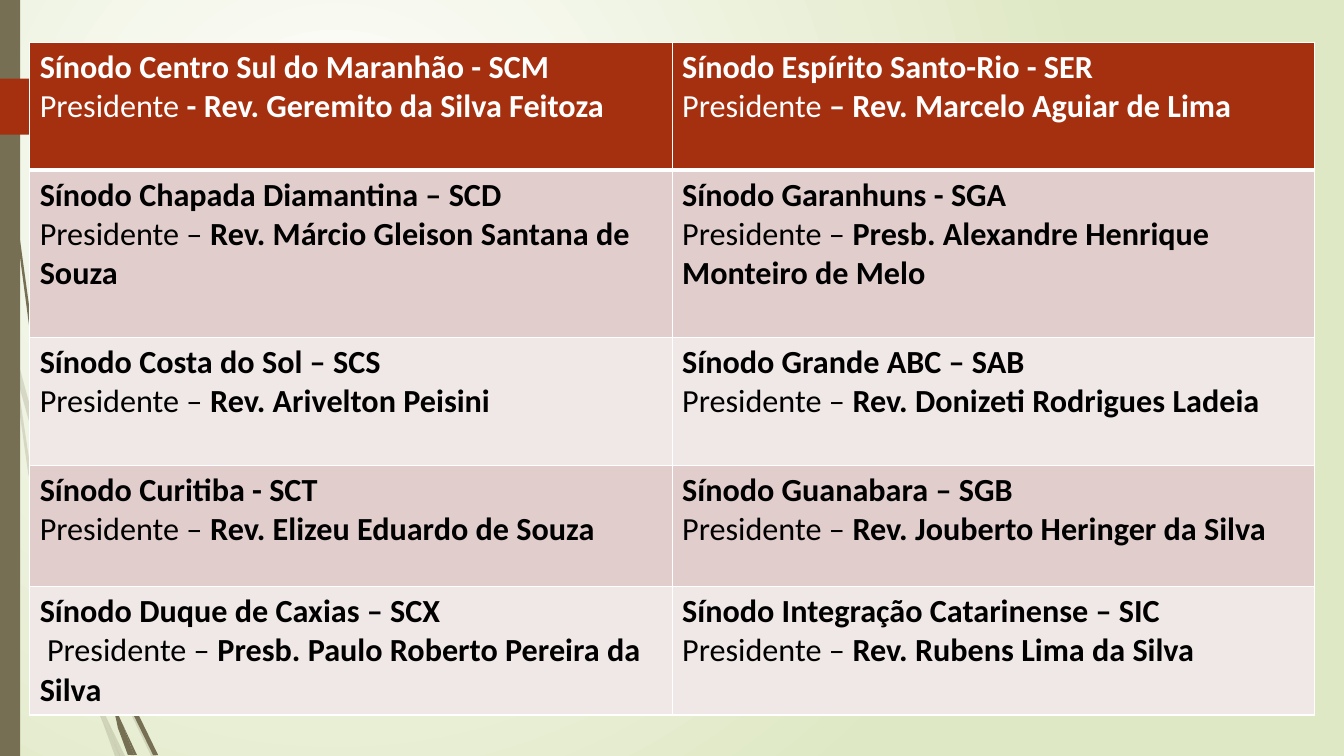
import dataclasses
import typing

import lxml.etree
import pptx
import pptx.dml.color
import pptx.enum.shapes
import pptx.oxml
import pptx.oxml.ns
import pptx.util

Pt = pptx.util.Pt
Points = list[tuple[float, float]]

COLOURS = {
    "bark": "766F54", "rust": "A53010", "white": "FFFFFF", "leaf": "DFE8C4",
    "black": "000000", "dark_band": "E1CDCC", "light_band": "F0E8E7",
}
FONT = "Calibri"
TABLE_LEFT, TABLE_TOP, COLUMN_WIDTH = 21.2, 30.2, 458.9
ROW_HEIGHTS = [91.4, 119.5, 91.4, 86.4, 91.4]


@dataclasses.dataclass
class Synod:
    name: str
    president: str
    role: str = "Presidente – "


@dataclasses.dataclass
class Wisp:
    points: Points
    opacity: int = 100


SYNODS = [
    [Synod("Sínodo Centro Sul do Maranhão - SCM", " - Rev. Geremito da Silva Feitoza", "Presidente"),
     Synod("Sínodo Espírito Santo-Rio - SER", " – Rev. Marcelo Aguiar de Lima", "Presidente")],
    [Synod("Sínodo Chapada Diamantina – SCD", "Rev. Márcio Gleison Santana de Souza"),
     Synod("Sínodo Garanhuns - SGA", "Presb. Alexandre Henrique Monteiro de Melo")],
    [Synod("Sínodo Costa do Sol – SCS", "Rev. Arivelton Peisini"),
     Synod("Sínodo Grande ABC – SAB", "Rev. Donizeti Rodrigues Ladeia")],
    [Synod("Sínodo Curitiba - SCT", "Rev. Elizeu Eduardo de Souza"),
     Synod("Sínodo Guanabara – SGB", "Rev. Jouberto Heringer da Silva")],
    [Synod("Sínodo Duque de Caxias – SCX", "Presb. Paulo Roberto Pereira da Silva", " Presidente – "),
     Synod("Sínodo Integração Catarinense – SIC", "Rev. Rubens Lima da Silva")],
]

# Grass blades, pale ones first
WISPS = [
    Wisp([(41.8, 375.8), (60.5, 431.3), (61.2, 421.9), (44.6, 374.4), (10.1, 248.4),
          (12.2, 270.7)], 20),
    Wisp([(67, 491.8), (50.4, 445.7), (22.3, 337.7), (12.2, 270.7), (7.9, 252), (20.2, 338.4),
          (46.8, 447.1), (66.2, 499), (72.7, 514.1), (71.3, 509)], 20),
    Wisp([(66.2, 437), (63.4, 429.1), (63.4, 439.2), (88.6, 499.7), (108, 540), (111.6, 540),
          (91.4, 498.2)], 20),
    Wisp([(85.7, 540), (89.3, 540), (75.6, 511.9)], 20),
    Wisp([(72.7, 514.1), (82.1, 540), (85.7, 540)], 20),
    Wisp([(69.1, 498.2), (67, 491.8), (71.3, 509), (72.7, 514.1), (85.7, 540), (75.6, 511.9)], 20),
    Wisp([(2.2, 0), (2.9, 34.6), (5, 79.2), (12.2, 167.8), (23.8, 255.6), (40.3, 343.4),
          (41, 346.3), (39.6, 326.2), (25.9, 255.6), (13.7, 167), (5.8, 78.5), (3.6, 34.6),
          (2.9, 0)]),
    Wisp([(81.4, 467.3), (79.2, 461.5), (79.9, 472.3), (95, 509.8), (109.4, 539.3),
          (113, 539.3), (97.9, 508.3)]),
    Wisp([(95.8, 539.3), (97.9, 539.3), (87.8, 517.7)]),
    Wisp([(84.2, 519.8), (91.4, 539.3), (94.3, 539.3)]),
    Wisp([(83.5, 508.3), (79.2, 497.5), (83.5, 516.2), (84.2, 519.8), (93.6, 539.3),
          (95.8, 539.3), (87.8, 517.7)]),
]


def colour(name: str) -> pptx.dml.color.RGBColor:
    return pptx.dml.color.RGBColor.from_string(COLOURS[name])


def add_element(parent: typing.Any, tag: str, **attributes: typing.Any) -> typing.Any:
    values = {key: str(value) for key, value in attributes.items()}
    return lxml.etree.SubElement(parent, pptx.oxml.ns.qn(tag), values)


def paint_background(page: typing.Any) -> None:
    fill = page.background.fill
    fill.gradient()
    for stop, position, name in zip(fill.gradient_stops, (0, 1), ("white", "leaf")):
        stop.position = position
        stop.color.rgb = colour(name)
    gradient = page.background._cSld.find(".//" + pptx.oxml.ns.qn("a:gradFill"))
    gradient.remove(gradient.find(pptx.oxml.ns.qn("a:lin")))
    circle = add_element(gradient, "a:path", path="circle")
    add_element(circle, "a:fillToRect", l=50000, t=50000, r=100000, b=100000)


def format_shape(shape: typing.Any, name: str, opacity: int = 100) -> None:
    shape.shadow.inherit = False
    shape.fill.solid()
    shape.fill.fore_color.rgb = colour(name)
    shape.line.fill.background()
    if opacity < 100:
        value = shape.fill._xPr.find(".//" + pptx.oxml.ns.qn("a:srgbClr"))
        add_element(value, "a:alpha", val=opacity * 1000)


def draw_wisp(page: typing.Any, wisp: Wisp) -> None:
    corners = [(Pt(x), Pt(y)) for x, y in wisp.points]
    outline = page.shapes.build_freeform(*corners[0])
    outline.add_line_segments(corners[1:], close=True)
    format_shape(outline.convert_to_shape(), "bark", wisp.opacity)


def add_text(para: typing.Any, text: str, *, name: str, bold: bool = True, size: float = 23) -> None:
    span = para.add_run()
    span.text = text
    span.font.name = FONT
    span.font.size = Pt(size)
    span.font.bold = bold
    span.font.color.rgb = colour(name)


def add_borders(cell: typing.Any, widths: dict[str, float]) -> None:
    properties = cell._tc.get_or_add_tcPr()
    for side, width in widths.items():
        line = add_element(properties, "a:ln" + side, w=Pt(width))
        add_element(add_element(line, "a:solidFill"), "a:srgbClr", val=COLOURS["white"])


def fill_cell(cell: typing.Any, synod: Synod, row: int) -> None:
    header = row == 0
    text_colour = "white" if header else "black"
    band = "rust" if header else ("dark_band" if row % 2 else "light_band")
    add_borders(cell, {"L": 1, "R": 1, "T": 3 if row == 1 else 1, "B": 3 if header else 1})
    cell.fill.solid()
    cell.fill.fore_color.rgb = colour(band)
    add_text(cell.text_frame.paragraphs[0], synod.name, name=text_colour)
    para = cell.text_frame.add_paragraph()
    add_text(para, synod.role, name=text_colour, bold=False)
    add_text(para, synod.president, name=text_colour)


def draw_table(page: typing.Any) -> None:
    columns = len(SYNODS[0])
    frame = page.shapes.add_table(len(SYNODS), columns, Pt(TABLE_LEFT), Pt(TABLE_TOP),
                                  Pt(columns * COLUMN_WIDTH), Pt(sum(ROW_HEIGHTS)))
    table = frame.table
    for column in table.columns:
        column.width = Pt(COLUMN_WIDTH)
    for row, (synods, height) in enumerate(zip(SYNODS, ROW_HEIGHTS)):
        table.rows[row].height = Pt(height)
        for column, synod in enumerate(synods):
            fill_cell(table.cell(row, column), synod, row)


def main() -> None:
    deck = pptx.Presentation()
    deck.slide_width, deck.slide_height = Pt(960), Pt(540)
    page = deck.slides.add_slide(deck.slide_layouts[6])
    paint_background(page)

    # Left-hand decoration
    for wisp in WISPS:
        draw_wisp(page, wisp)
    presets = pptx.enum.shapes.MSO_SHAPE
    bar = page.shapes.add_shape(presets.RECTANGLE, 0, 0, Pt(14.4), Pt(540))
    format_shape(bar, "bark")
    tab = page.shapes.add_shape(presets.PENTAGON, 0, Pt(56.2), Pt(125), Pt(40))
    format_shape(tab, "rust")

    # Synods and their presidents
    draw_table(page)
    deck.save("out.pptx")


if __name__ == "__main__":
    main()
